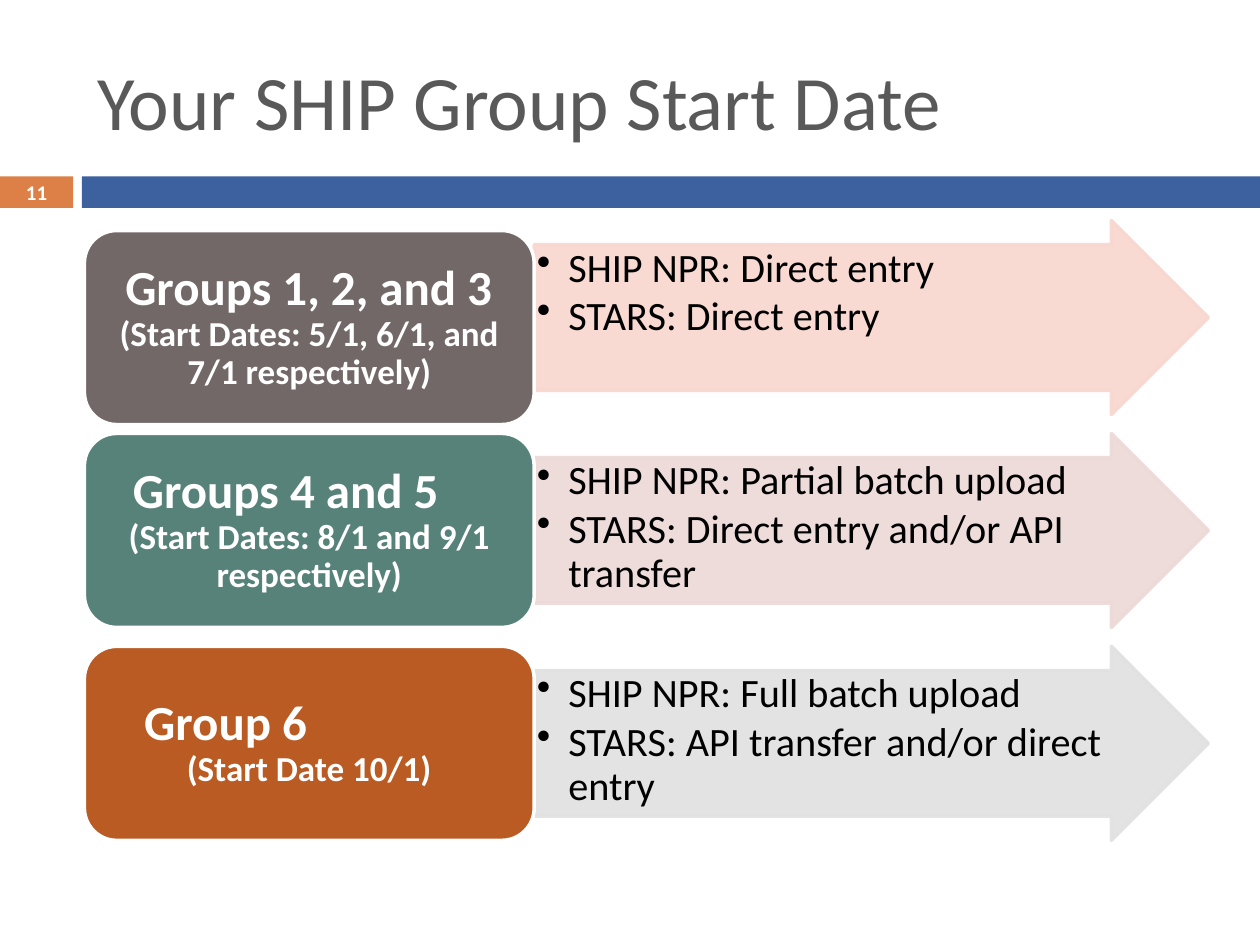
"""Build the slide that shows the start date and entry methods of each SHIP group."""
import pptx
import pptx.dml.color
import pptx.enum.dml
import pptx.enum.shapes
import pptx.enum.text
import pptx.oxml.ns
import pptx.util
from lxml import etree

Inches = pptx.util.Inches
Pt = pptx.util.Pt
RGBColor = pptx.dml.color.RGBColor
SHAPE = pptx.enum.shapes.MSO_SHAPE
ALIGN = pptx.enum.text.PP_ALIGN
ANCHOR = pptx.enum.text.MSO_ANCHOR
qn = pptx.oxml.ns.qn

WHITE = RGBColor(0xFF, 0xFF, 0xFF)
BLACK = RGBColor(0x00, 0x00, 0x00)
TITLE_GRAY = RGBColor(0x59, 0x59, 0x59)
ORANGE = RGBColor(0xDD, 0x80, 0x47)
BLUE = RGBColor(0x3C, 0x61, 0x9E)
TAUPE = RGBColor(0x72, 0x68, 0x68)
GREEN = RGBColor(0x57, 0x82, 0x79)
RUST = RGBColor(0xB9, 0x5B, 0x22)
PEACH = RGBColor(0xF8, 0xD7, 0xCE)
ROSE = RGBColor(0xED, 0xD9, 0xD7)
SILVER = RGBColor(0xE1, 0xE1, 0xE1)

GROUP_LEFT, GROUP_WIDTH = 0.67, 3.57
ARROW_LEFT, ARROW_WIDTH = 4.24, 5.35
ROW_TOP, ROW_STEP, ROW_HEIGHT = 1.75, 1.69, 1.54

GROUPS = [
    ("Groups 1, 2, and 3", 0.13, "(Start Dates: 5/1, 6/1, and 7/1 respectively)", 0.08,
     TAUPE, PEACH, ["SHIP NPR: Direct entry", "STARS: Direct entry"]),
    ("Groups 4 and 5", 0.19, "(Start Dates: 8/1 and 9/1 respectively)", 0,
     GREEN, ROSE, ["SHIP NPR: Partial batch upload", "STARS: Direct entry and/or API transfer"]),
    ("Group 6", 0.28, "(Start Date 10/1)", 0,
     RUST, SILVER, ["SHIP NPR: Full batch upload", "STARS: API transfer and/or direct entry"]),
]


class SlideBuilder:
    """Hold the font and the current slide, and add each kind of element."""

    def __init__(self, slide, font="Calibri"):
        self.slide = slide
        self.font = font

    def run(self, paragraph, text, size, color, bold=False):
        """Add one formatted run to a paragraph."""
        run = paragraph.add_run()
        run.text = text
        run.font.name = self.font
        run.font.size = Pt(size)
        run.font.bold = bold
        run.font.color.rgb = color

    def frame(self, shape, anchor, side=0, edge=0):
        """Set anchor and margins of a shape's text and return its frame."""
        frame = shape.text_frame
        frame.word_wrap = True
        frame.vertical_anchor = anchor
        frame.margin_left = frame.margin_right = Inches(side)
        frame.margin_top = frame.margin_bottom = Inches(edge)
        return frame

    def paragraph(self, frame, index, align):
        """Return the paragraph at an index, adding it when needed."""
        paragraph = frame.paragraphs[0] if index == 0 else frame.add_paragraph()
        paragraph.alignment = align
        paragraph.line_spacing = 0.9
        return paragraph

    def title(self, text):
        """Place and fill the title placeholder."""
        title = self.slide.shapes.title
        title.left, title.top = Inches(0.67), Inches(0.25)
        title.width, title.height = Inches(8.92), Inches(1.08)
        frame = self.frame(title, ANCHOR.MIDDLE, 0.1, 0.05)
        frame.auto_size = pptx.enum.text.MSO_AUTO_SIZE.NONE
        frame.paragraphs[0].alignment = ALIGN.LEFT
        self.run(frame.paragraphs[0], text, 44, TITLE_GRAY)

    def shape(self, kind, left, top, width, height, fill, line=None):
        """Add a flat preset shape with an optional outline."""
        shape = self.slide.shapes.add_shape(
            kind, Inches(left), Inches(top), Inches(width), Inches(height))
        shape.shadow.inherit = False
        shape.fill.solid()
        shape.fill.fore_color.rgb = fill
        if line is None:
            shape.line.fill.background()
        else:
            shape.line.color.rgb = line
            shape.line.width = Pt(2)
        return shape

    def page_number(self, box, text):
        """Write the page number in its box."""
        paragraph = self.frame(box, ANCHOR.MIDDLE).paragraphs[0]
        paragraph.alignment = ALIGN.CENTER
        self.run(paragraph, text, 11.9, WHITE, True)

    def group_box(self, top, fill, heading, indent, dates):
        """Add a rounded box with a group heading and its start dates."""
        box = self.shape(SHAPE.ROUNDED_RECTANGLE, GROUP_LEFT, top,
                         GROUP_WIDTH, ROW_HEIGHT, fill, WHITE)
        frame = self.frame(box, ANCHOR.MIDDLE, 0.12, 0.06)
        name = self.paragraph(frame, 0, ALIGN.LEFT)
        name._p.get_or_add_pPr().set("marL", str(Inches(indent)))
        self.run(name, heading, 28, WHITE, True)
        self.run(self.paragraph(frame, 1, ALIGN.CENTER), dates, 20, WHITE, True)

    def method_arrow(self, top, fill, methods):
        """Add a translucent arrow with a bulleted list of entry methods."""
        arrow = self.shape(SHAPE.RIGHT_ARROW, ARROW_LEFT, top,
                           ARROW_WIDTH, ROW_HEIGHT, fill, fill)
        arrow.adjustments[0] = 0.75
        for color in arrow._element.spPr.iter(qn("a:srgbClr")):
            etree.SubElement(color, qn("a:alpha")).set("val", "90000")
        frame = self.frame(arrow, ANCHOR.TOP, 0.02, 0.02)
        for index, method in enumerate(methods):
            item = self.paragraph(frame, index, ALIGN.LEFT)
            item.space_after = Pt(3)
            properties = item._p.get_or_add_pPr()
            properties.set("marL", str(Inches(0.25)))
            properties.set("indent", str(Inches(-0.25)))
            etree.SubElement(properties, qn("a:buChar")).set("char", "•")
            self.run(item, method, 23, BLACK)


def main():
    """Build and save the slide."""
    deck = pptx.Presentation()
    deck.slide_width, deck.slide_height = Inches(10), Inches(7.5)
    builder = SlideBuilder(deck.slides.add_slide(deck.slide_layouts[5]))
    number_box = builder.shape(SHAPE.RECTANGLE, 0, 1.4, 0.58, 0.25, ORANGE)
    builder.page_number(number_box, "11")
    builder.shape(SHAPE.RECTANGLE, 0.65, 1.4, 9.35, 0.25, BLUE)
    builder.title("Your SHIP Group Start Date")
    for row, (heading, indent, dates, drop, dark, light, methods) in enumerate(GROUPS):
        top = ROW_TOP + row * ROW_STEP
        builder.method_arrow(top, light, methods)
        builder.group_box(top + drop, dark, heading, indent, dates)
    deck.save("out.pptx")


if __name__ == "__main__":
    main()
